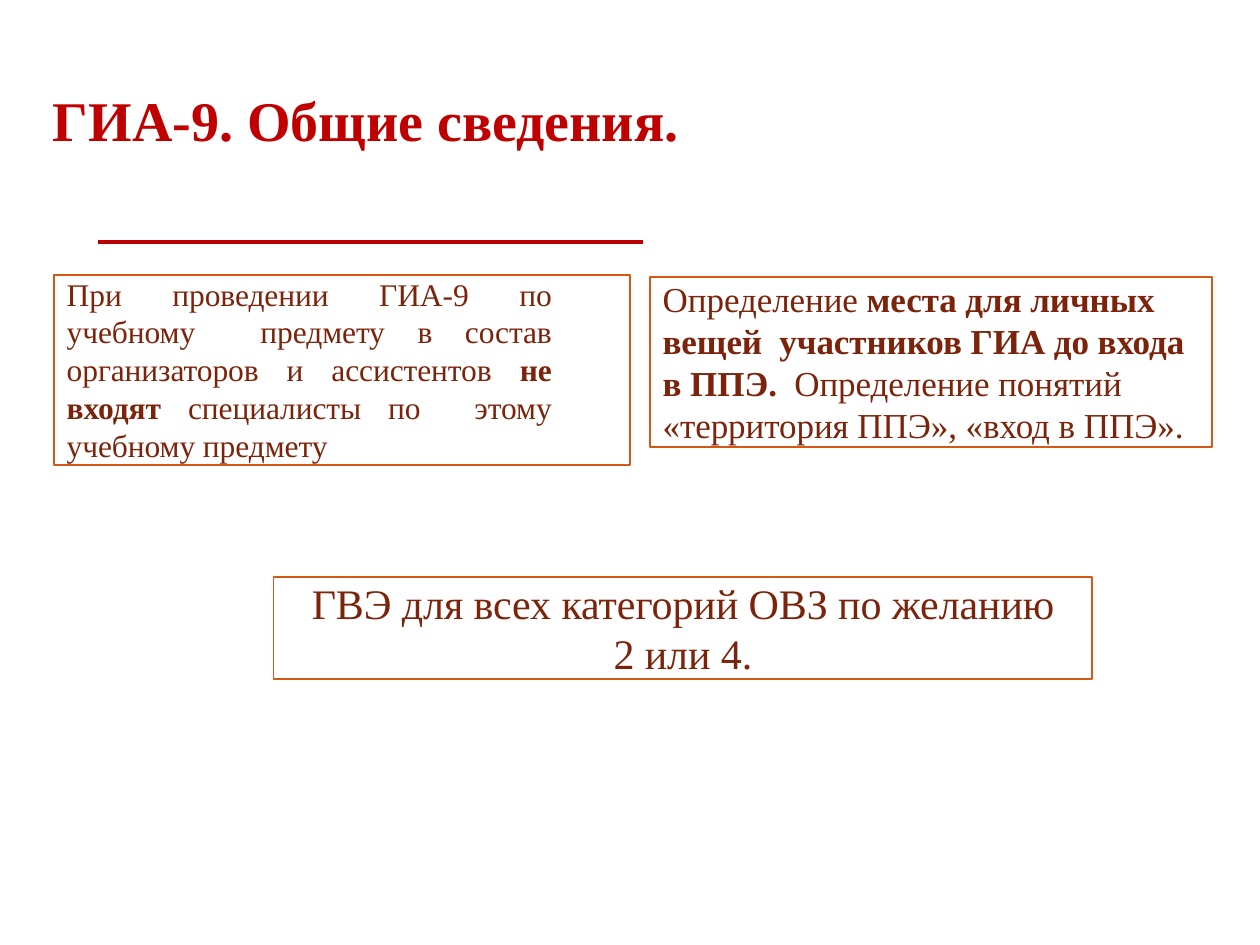
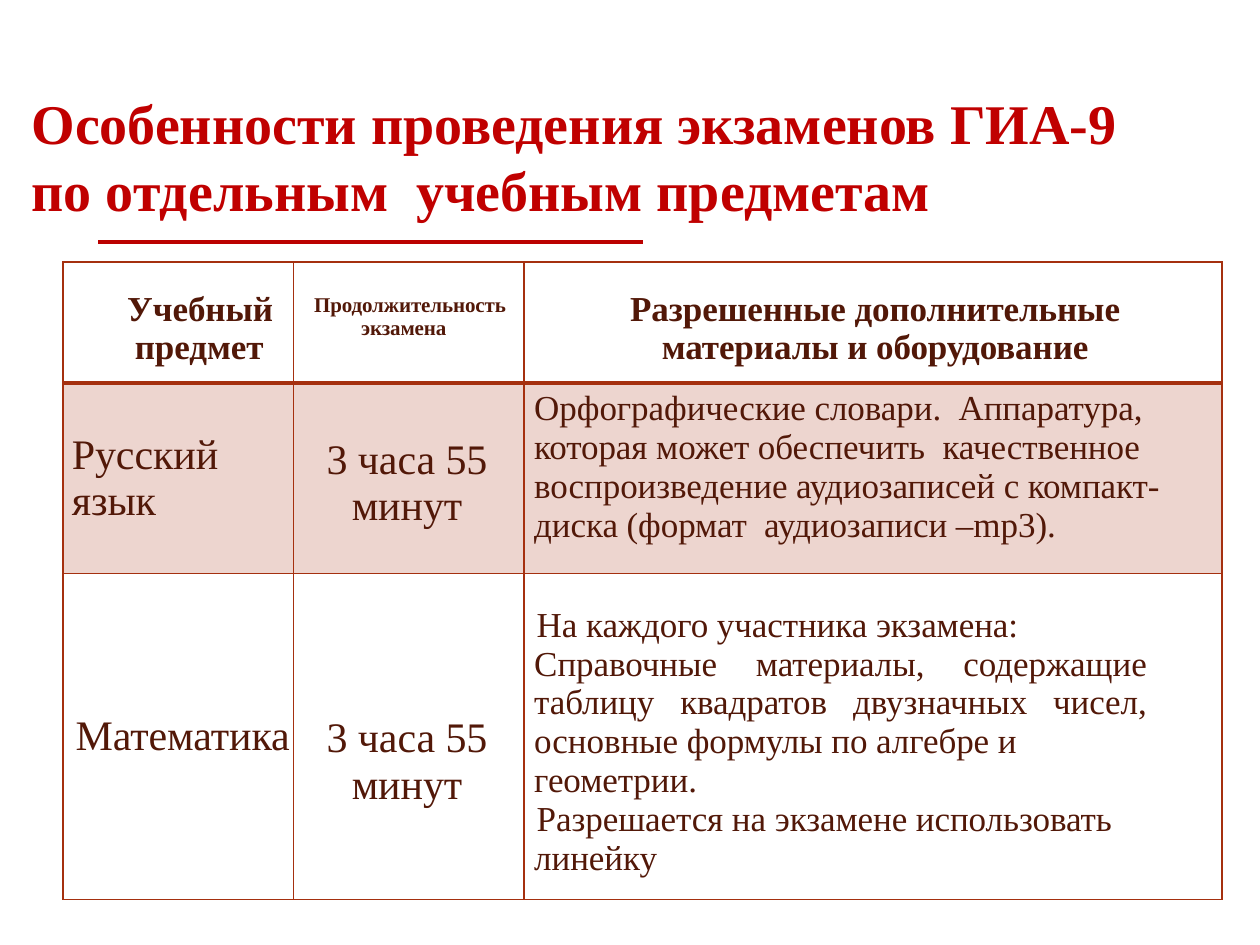
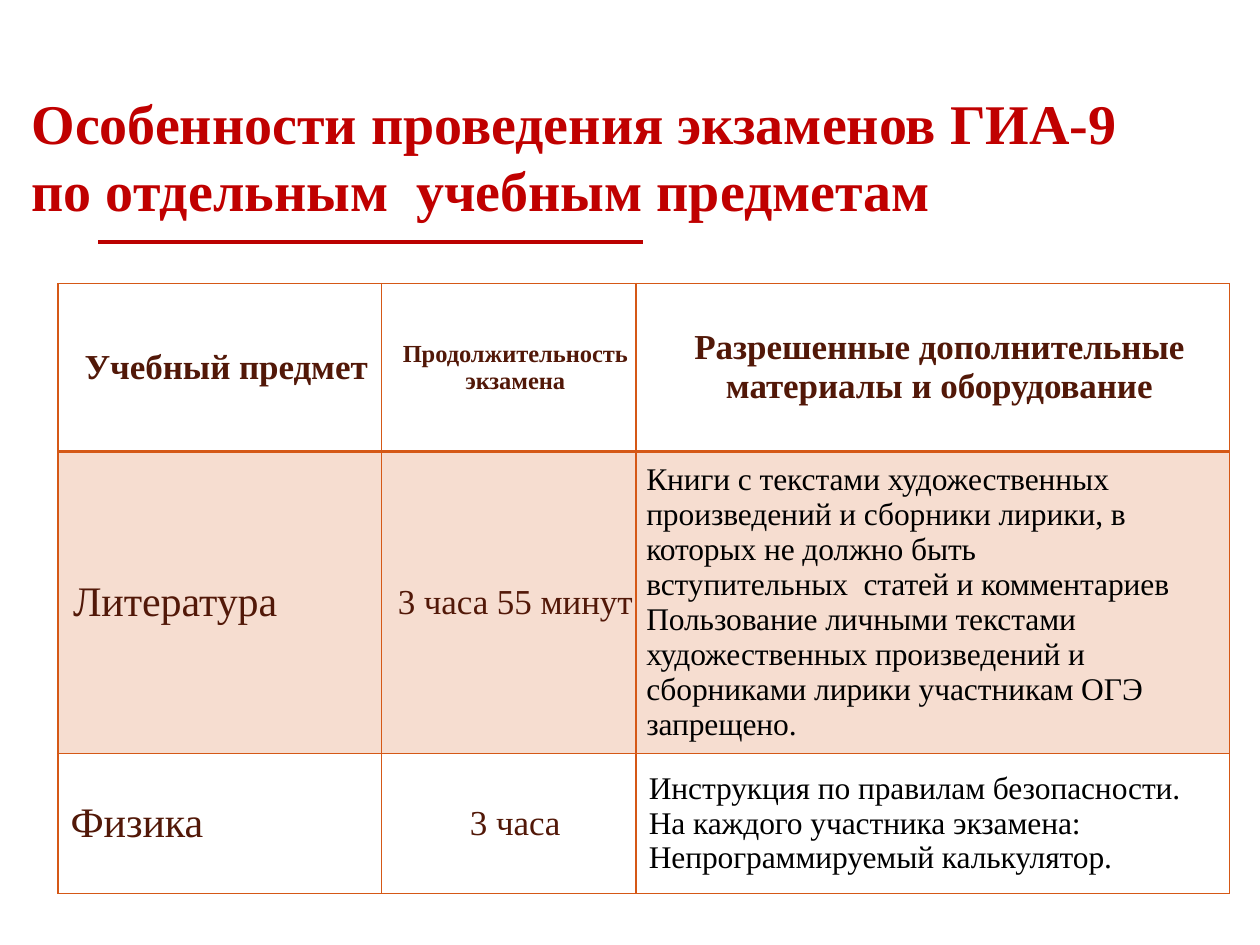
import pptx
import pptx.util
import pptx.dml.color
import pptx.enum.text
import pptx.enum.shapes
import pptx.oxml
from pptx.oxml.ns import qn
from lxml import etree

Inches = pptx.util.Inches
Pt = pptx.util.Pt
ALIGN = pptx.enum.text.PP_ALIGN
ANCHOR = pptx.enum.text.MSO_ANCHOR

FONT = "Times New Roman"
RED, RULE = "C00000", "BB0100"
BROWN, DARK, BLACK, WHITE = "7C240B", "521808", "000000", "FFFFFF"
ORANGE, RUST = "D55816", "A5300F"
L, C, J = ALIGN.LEFT, ALIGN.CENTER, ALIGN.JUSTIFY
TOP, MIDDLE = ANCHOR.TOP, ANCHOR.MIDDLE

OVERVIEW_TITLE = "ГИА-9. Общие сведения."
EXAM_TITLE = "Особенности проведения экзаменов ГИА-9 по отдельным  учебным предметам"

BOXES = [
    dict(at=(0.43, 2.18, 4.57, 1.51), size=18, align=J, left=0.1, right=0.62, paras=[
        [("При проведении ГИА-9 по учебному  предмету в состав организаторов и ассистентов ", False),
         ("не входят ", True),
         ("специалисты по  этому учебному предмету", False)]]),
    dict(at=(2.17, 4.58, 6.5, 0.81), size=24, align=C, left=0, right=0, paras=[
        [("ГВЭ для всех категорий ОВЗ по желанию", False)],
        [("2 или 4.", False)]]),
    dict(at=(5.16, 2.2, 4.46, 1.35), size=20, align=L, left=0.1, right=0.1, paras=[
        [("Определение ", False),
         ("места для личных вещей  участников ГИА до входа в ППЭ.  ", True),
         ("Определение понятий «территория ППЭ», «вход в ППЭ».", False)]]),
]


def cell_spec(paras, size, align=L, left=0.1, top=0, right=0, anchor=MIDDLE, color=DARK, bold=False):
    paras = [p if isinstance(p, tuple) else (p, left) for p in paras]
    return dict(paras=paras, size=size, align=align, top=top, right=right,
                anchor=anchor, color=color, bold=bold)


TABLES = [
    dict(at=(0.5, 2.08), cols=(1.83, 1.83, 5.54), rows=(0.96, 1.51, 2.59), color=RUST, cells=[
        [cell_spec([("Учебный", 0.51), ("предмет", 0.57)], 20, top=0.22, anchor=TOP, bold=True),
         cell_spec([("Продолжительность", 0.1), ("экзамена", 0)], 12, C, top=0.25, right=0.08,
                   anchor=TOP, bold=True),
         cell_spec(["Разрешенные дополнительные", "материалы и оборудование"], 20, C, 0.03,
                   top=0.22, anchor=TOP, bold=True)],
        [cell_spec(["Русский", "язык"], 24, left=0.07),
         cell_spec(["3 часа 55 минут"], 24, C, 0.07, top=0.08, right=0.1),
         cell_spec(["Орфографические словари.  Аппаратура, которая может обеспечить  качественное "
                    "воспроизведение аудиозаписей с компакт-диска (формат  аудиозаписи –mp3)."],
                   20, left=0.08, top=0.05, anchor=TOP)],
        [cell_spec(["Математика"], 24),
         cell_spec(["3 часа 55 минут"], 24, C, 0.07, top=0.4, right=0.1),
         cell_spec([("На каждого участника экзамена:", 0.1),
                    "Справочные материалы, содержащие таблицу квадратов двузначных чисел, "
                    "основные формулы по алгебре и",
                    "геометрии.",
                    ("Разрешается на экзамене использовать", 0.1),
                    "линейку"], 20, J, 0.08, top=0.26, right=0.6, anchor=TOP)],
    ]),
    dict(at=(0.46, 2.25), cols=(2.57, 2.02, 4.71), rows=(1.33, 2.4, 1.11), color=ORANGE, cells=[
        [cell_spec(["Учебный предмет"], 20, C, bold=True),
         cell_spec(["Продолжительность", "экзамена"], 14, C, bold=True),
         cell_spec(["Разрешенные дополнительные материалы и оборудование"], 20, C, bold=True)],
        [cell_spec(["Литература"], 24, left=0.12),
         cell_spec(["3 часа 55 минут"], 20, C),
         cell_spec(["Книги с текстами художественных",
                    "произведений и сборники лирики, в которых не должно быть "
                    "вступительных  статей и комментариев",
                    "Пользование личными текстами",
                    "художественных произведений и сборниками лирики участникам ОГЭ запрещено."],
                   18, left=0.08, right=0.43, color=BLACK)],
        [cell_spec(["Физика"], 24),
         cell_spec(["3 часа"], 20, C),
         cell_spec(["Инструкция по правилам безопасности.",
                    "На каждого участника экзамена:",
                    "Непрограммируемый калькулятор."], 18, color=BLACK)],
    ]),
]


def rgb(color):
    return pptx.dml.color.RGBColor.from_string(color)


def set_margins(frame, left=0, top=0, right=0, bottom=0):
    frame.margin_left, frame.margin_top = Inches(left), Inches(top)
    frame.margin_right, frame.margin_bottom = Inches(right), Inches(bottom)


def write(tf, paras, size, color, align, tracking=-5):
    for i, (runs, left) in enumerate(paras):
        p = tf.paragraphs[0] if i == 0 else tf.add_paragraph()
        p.alignment = align
        p.line_spacing = 1.0
        p.space_before = p.space_after = Pt(0)
        pPr = p._p.get_or_add_pPr()
        pPr.set("marL", str(Inches(left)))
        pPr.set("indent", "0")
        for text, bold in runs:
            r = p.add_run()
            r.text = text
            r.font.name, r.font.size, r.font.bold = FONT, Pt(size), bold
            r.font.color.rgb = rgb(color)
            r._r.get_or_add_rPr().set("spc", str(tracking))


def add_slide(prs, title, at, top, right, anchor):
    s = prs.slides.add_slide(prs.slide_layouts[5])
    rule = s.shapes.add_connector(pptx.enum.shapes.MSO_CONNECTOR.STRAIGHT,
                                  Inches(0.78), Inches(1.92), Inches(5.1), Inches(1.92))
    rule.line.color.rgb = rgb(RULE)
    rule.line.width = Pt(2.5)
    etree.SubElement(rule._element.spPr, qn("a:effectLst"))
    sp = s.shapes.title
    sp.left, sp.top, sp.width, sp.height = map(Inches, at)
    tf = sp.text_frame
    tf.word_wrap = True
    tf.auto_size = pptx.enum.text.MSO_AUTO_SIZE.NONE
    tf.vertical_anchor = anchor
    set_margins(tf, top=top, right=right)
    write(tf, [([(title, True)], 0)], 32, RED, L, 0)
    return s


def add_box(s, at, size, align, left, right, paras):
    sp = s.shapes.add_shape(pptx.enum.shapes.MSO_SHAPE.RECTANGLE, *map(Inches, at))
    sp.shadow.inherit = False
    sp.fill.solid()
    sp.fill.fore_color.rgb = rgb(WHITE)
    sp.line.color.rgb = rgb(ORANGE)
    sp.line.width = Pt(1)
    tf = sp.text_frame
    tf.word_wrap = True
    tf.vertical_anchor = TOP
    set_margins(tf, right=right)
    write(tf, [(runs, left) for runs in paras], size, BROWN, align)


def set_borders(cell, color, widths):
    tcPr = cell._tc.get_or_add_tcPr()
    for side, width in zip("LRTB", widths):
        ln = etree.SubElement(tcPr, qn(f"a:ln{side}"), w=str(Pt(width)))
        fill = etree.SubElement(ln, qn("a:solidFill"))
        etree.SubElement(fill, qn("a:srgbClr"), val=color)


def tint(cell, color):
    cell.fill.solid()
    cell.fill.fore_color.rgb = rgb(color)
    clr = cell._tc.tcPr.find(qn("a:solidFill")).find(qn("a:srgbClr"))
    etree.SubElement(clr, qn("a:alpha"), val="20000")


def add_exam_table(s, at, cols, rows, color, cells):
    frame = s.shapes.add_table(len(rows), len(cols), *map(Inches, (*at, sum(cols), sum(rows))))
    table = frame.table
    table.horz_banding = False
    for column, width in zip(table.columns, cols):
        column.width = Inches(width)
    for row, height in zip(table.rows, rows):
        row.height = Inches(height)
    for i, specs in enumerate(cells):
        for j, spec in enumerate(specs):
            cell = table.cell(i, j)
            set_margins(cell, top=spec["top"], right=spec["right"])
            cell.vertical_anchor = spec["anchor"]
            set_borders(cell, color, (1, 1, 2 if i == 1 else 1, 2 if i == 0 else 1))
            if i == 1:
                tint(cell, color)
            else:
                cell.fill.background()
            paras = [([(text, spec["bold"])], left) for text, left in spec["paras"]]
            write(cell.text_frame, paras, spec["size"], spec["color"], spec["align"])


def main():
    prs = pptx.Presentation()
    prs.slide_width, prs.slide_height = Inches(10), Inches(7.5)
    s = add_slide(prs, OVERVIEW_TITLE, (0.42, 0.6, 6.5, 1.16), 0.08, 0, TOP)
    for box in BOXES:
        add_box(s, **box)
    for table in TABLES:
        s = add_slide(prs, EXAM_TITLE, (0.25, 0.67, 9.21, 1.12), 0.01, 0.3, MIDDLE)
        add_exam_table(s, **table)
    prs.save("out.pptx")


if __name__ == "__main__":
    main()
